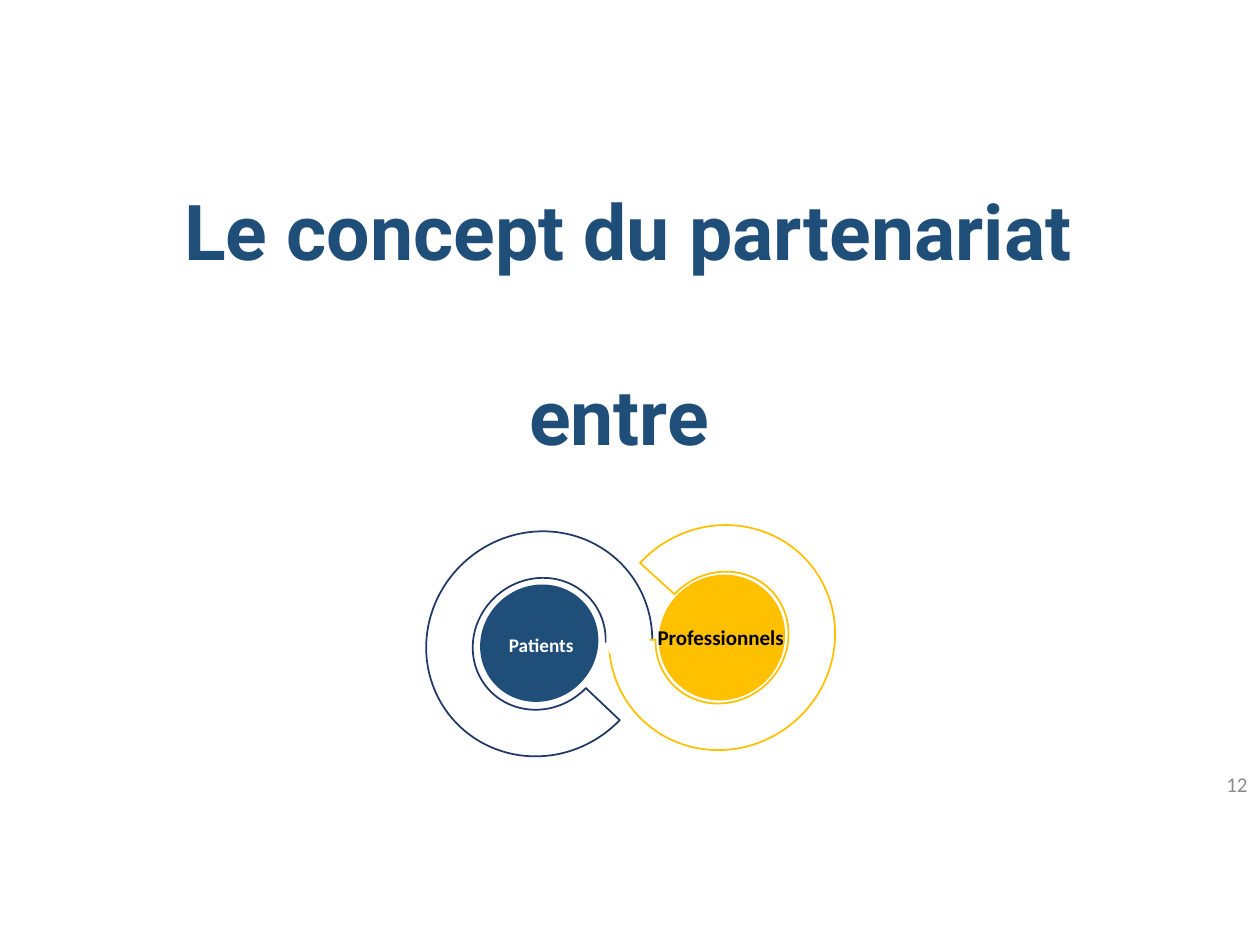
from dataclasses import dataclass

from pptx import Presentation
from pptx.dml.color import RGBColor
from pptx.enum.shapes import MSO_SHAPE as Shape
from pptx.enum.text import MSO_ANCHOR as Anchor, PP_ALIGN as Align
from pptx.util import Inches, Pt


@dataclass(frozen=True)
class Theme:
    blue: str = "1F4E79"
    navy: str = "203864"
    gold: str = "FFC000"
    white: str = "FFFFFF"
    black: str = "000000"
    grey: str = "8C8C8C"
    title_font: str = "Roboto"
    body_font: str = "Calibri"
    title_size: int = 44
    label_size: int = 12
    small_label_size: int = 11


THEME = Theme()


def style_text(paragraph, size, color, font=THEME.body_font, bold=True):
    paragraph.font.name = font
    paragraph.font.size = Pt(size)
    paragraph.font.bold = bold
    paragraph.font.color.rgb = RGBColor.from_string(color)


def add_outline(shapes, kind, box, fill=None, line=None, rotation=0):
    outline = shapes.add_shape(kind, *map(Inches, box))
    outline.shadow.inherit = False
    outline.rotation = rotation
    if fill:
        outline.fill.solid()
        outline.fill.fore_color.rgb = RGBColor.from_string(fill)
    else:
        outline.fill.background()
    if line:
        outline.line.color.rgb = RGBColor.from_string(line)
        outline.line.width = Pt(1)
    else:
        outline.line.fill.background()
    return outline


def add_arc(shapes, box, start, line, rotation, fill=None):
    arc = add_outline(shapes, Shape.BLOCK_ARC, box, fill, line, rotation)
    for index, value in enumerate((start, 23.53, 0.21)):
        arc.adjustments[index] = value


def add_label(shapes, box, text, size, color, wrap=True):
    frame = shapes.add_textbox(*map(Inches, box)).text_frame
    frame.word_wrap = wrap
    frame.text = text
    style_text(frame.paragraphs[0], size, color)


def add_title(slide, box):
    frame = slide.shapes.add_textbox(*map(Inches, box)).text_frame
    frame.word_wrap = True
    frame.vertical_anchor = Anchor.BOTTOM
    frame.margin_bottom = Inches(0.08)
    frame.text = "Le concept du partenariat\nentre "
    for paragraph in frame.paragraphs:
        paragraph.alignment = Align.CENTER
        paragraph.line_spacing = 0.8
        style_text(paragraph, THEME.title_size, THEME.blue, THEME.title_font)
    frame.paragraphs[1].space_before = Pt(63)


def add_partnership(slide, left, top):
    def place(x, y, width, height):
        return left + x, top + y, width, height

    rings = slide.shapes.add_group_shape().shapes
    add_arc(rings, place(0, 0.05, 1.82, 1.76), 50.68, THEME.navy, 319)
    add_arc(rings, place(1.45, 0, 1.82, 1.76), 50, THEME.gold, 139, THEME.white)
    add_outline(rings, Shape.OVAL, place(0.43, 0.47, 0.96, 0.91), THEME.blue, rotation=319)
    add_outline(rings, Shape.OVAL, place(1.85, 0.39, 1.02, 0.98), THEME.gold, rotation=319)
    add_label(rings, place(0.57, 0.8, 0.84, 0.29), "Patients",
              THEME.small_label_size, THEME.white)
    add_label(slide.shapes, place(1.75, 0.73, 1.22, 0.3), "Professionnels",
              THEME.label_size, THEME.black, wrap=False)
    add_outline(slide.shapes, Shape.OVAL, place(1.45, 0.73, 0.33, 0.35),
                THEME.white, THEME.white)


def add_page_number(slide, box, number):
    frame = slide.shapes.add_textbox(*map(Inches, box)).text_frame
    frame.word_wrap = True
    frame.vertical_anchor = Anchor.MIDDLE
    frame.text = number
    frame.paragraphs[0].alignment = Align.RIGHT
    style_text(frame.paragraphs[0], THEME.label_size, THEME.grey, bold=False)


def main():
    deck = Presentation()
    deck.slide_width, deck.slide_height = Inches(10), Inches(7.5)
    slide = deck.slides.add_slide(deck.slide_layouts[6])
    add_title(slide, (0.57, 0.04, 8.84, 3.69))
    add_page_number(slide, (7.67, 6.05, 2.33, 0.35), "12")
    add_partnership(slide, 3.37, 4.18)
    deck.save("out.pptx")


if __name__ == "__main__":
    main()
